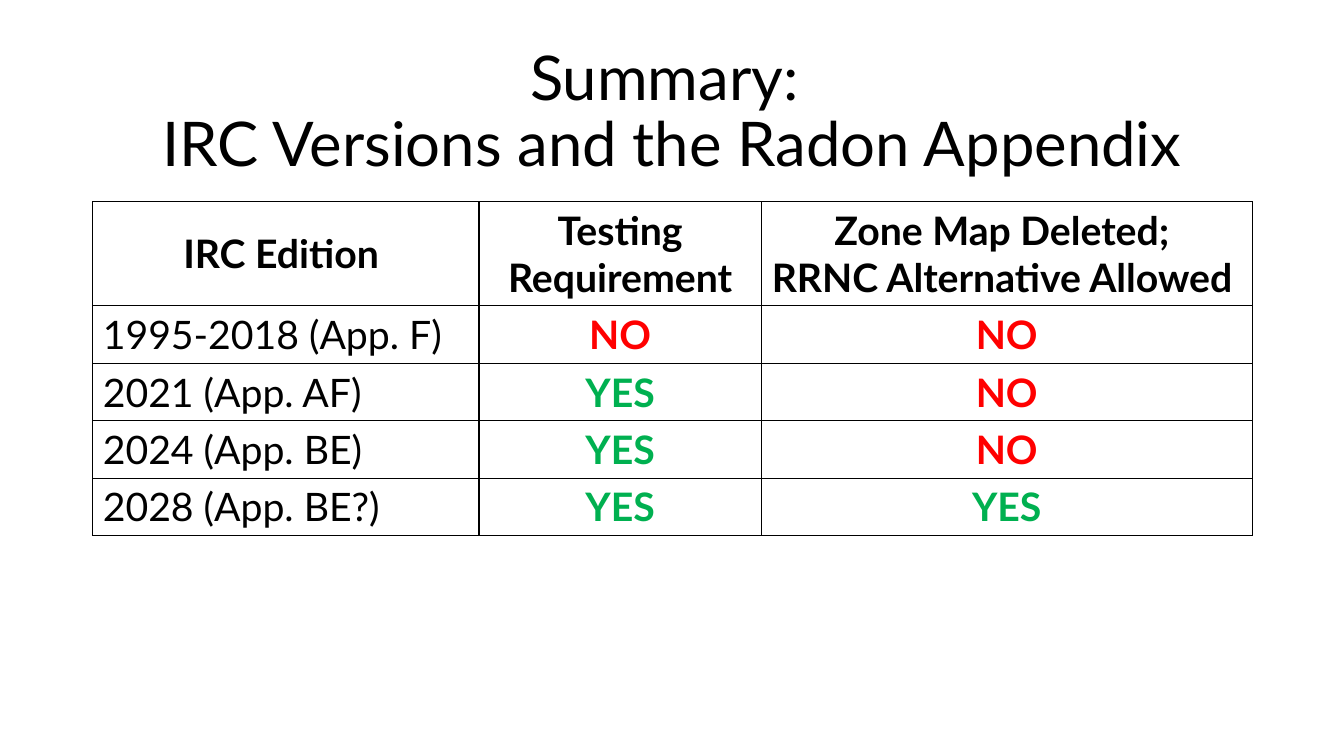
from dataclasses import dataclass

from lxml import etree
from pptx import Presentation
from pptx.dml.color import RGBColor
from pptx.enum.text import MSO_ANCHOR, PP_ALIGN
from pptx.oxml.ns import qn
from pptx.slide import Slide
from pptx.table import _Cell
from pptx.text.text import _Paragraph
from pptx.util import Inches, Pt

CENTER = PP_ALIGN.CENTER
LEFT = PP_ALIGN.LEFT
MIDDLE = MSO_ANCHOR.MIDDLE
FONT = "Lato"
COLORS = {"black": "000000", "no": "FF0000", "yes": "00B050"}
TITLE_LINES = ("Summary: ", "IRC Versions and the Radon Appendix")
HEADERS = (
    ("IRC Edition ",),
    ("Testing", "Requirement"),
    ("Zone Map Deleted; ", "RRNC Alternative Allowed "),
)
COLUMN_WIDTHS = (3.83, 2.8, 4.87)
HEADER_HEIGHT = 1.03
ROW_HEIGHT = 0.57
BORDER_WIDTH = Pt(1)


@dataclass(frozen=True)
class Edition:
    name: str
    testing: str
    zone_map_deleted: str


EDITIONS = (
    Edition("1995-2018 (App. F)", "NO", "NO"),
    Edition("2021 (App. AF)", "YES", "NO"),
    Edition("2024 (App. BE)", "YES", "NO"),
    Edition("2028 (App. BE?)", "YES", "YES"),
)


def add_run(paragraph: _Paragraph, text: str, size: int, color: str, bold: bool) -> None:
    run = paragraph.add_run()
    run.text = text
    run.font.name = FONT
    run.font.size = Pt(size)
    run.font.bold = bold
    run.font.color.rgb = RGBColor.from_string(COLORS[color])


def add_borders(cell: _Cell) -> None:
    properties = cell._tc.get_or_add_tcPr()
    for side in ("lnL", "lnR", "lnT", "lnB"):
        line = etree.SubElement(properties, qn(f"a:{side}"), w=str(BORDER_WIDTH))
        fill = etree.SubElement(line, qn("a:solidFill"))
        etree.SubElement(fill, qn("a:srgbClr"), val=COLORS["black"])


def fill_cell(
    cell: _Cell,
    lines: tuple[str, ...],
    color: str = "black",
    bold: bool = True,
    alignment: PP_ALIGN = CENTER,
) -> None:
    add_borders(cell)
    cell.fill.background()
    cell.vertical_anchor = MIDDLE
    frame = cell.text_frame
    for index, text in enumerate(lines):
        paragraph = frame.add_paragraph() if index else frame.paragraphs[0]
        paragraph.alignment = alignment
        add_run(paragraph, text, 28, color, bold)


def add_title(slide: Slide) -> None:
    shape = slide.shapes.add_textbox(Inches(0.92), Inches(0.4), Inches(11.5), Inches(1.45))
    frame = shape.text_frame
    frame.word_wrap = True
    frame.vertical_anchor = MIDDLE
    paragraph = frame.paragraphs[0]
    paragraph.alignment = CENTER
    paragraph.line_spacing = 0.9
    for index, text in enumerate(TITLE_LINES):
        if index:
            paragraph.add_line_break()
        add_run(paragraph, text, 44, "black", False)


def add_edition_table(slide: Slide) -> None:
    table = slide.shapes.add_table(
        len(EDITIONS) + 1,
        len(HEADERS),
        Inches(0.92),
        Inches(2),
        Inches(sum(COLUMN_WIDTHS)),
        Inches(HEADER_HEIGHT + ROW_HEIGHT * len(EDITIONS)),
    ).table
    table.horz_banding = False
    for column, width in zip(table.columns, COLUMN_WIDTHS):
        column.width = Inches(width)
    for index, row in enumerate(table.rows):
        row.height = Inches(ROW_HEIGHT if index else HEADER_HEIGHT)
    for index, lines in enumerate(HEADERS):
        fill_cell(table.cell(0, index), lines)
    for index, edition in enumerate(EDITIONS, start=1):
        fill_cell(table.cell(index, 0), (edition.name,), bold=False, alignment=LEFT)
        for column, answer in enumerate((edition.testing, edition.zone_map_deleted), start=1):
            fill_cell(table.cell(index, column), (answer,), answer.lower())


def main() -> None:
    presentation = Presentation()
    presentation.slide_width = Inches(13.33)
    presentation.slide_height = Inches(7.5)
    slide = presentation.slides.add_slide(presentation.slide_layouts[6])
    add_title(slide)
    add_edition_table(slide)
    presentation.save("out.pptx")


if __name__ == "__main__":
    main()
